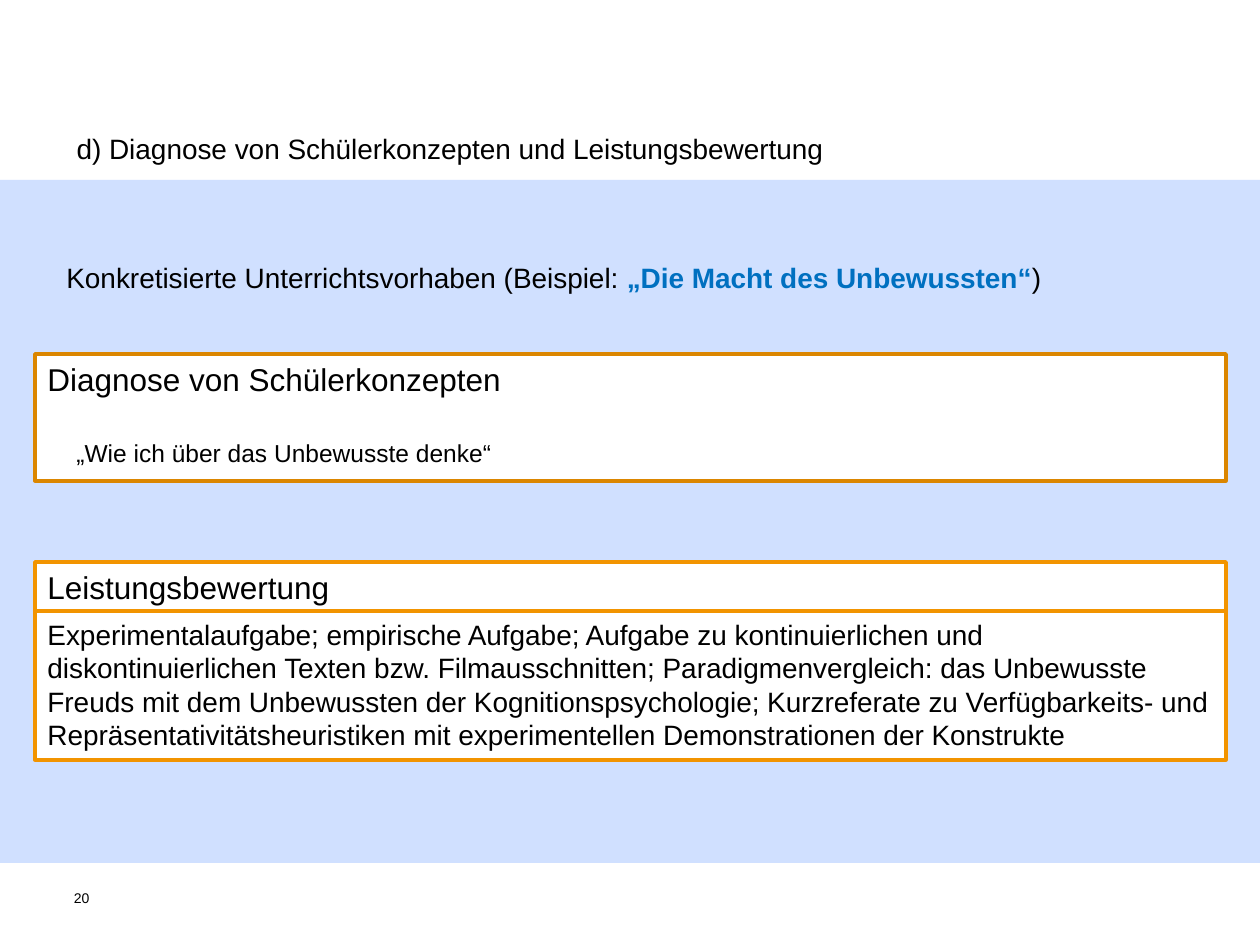
from pptx import Presentation
from pptx.dml.color import RGBColor
from pptx.enum.shapes import MSO_SHAPE
from pptx.enum.text import MSO_ANCHOR, MSO_AUTO_SIZE, PP_ALIGN
from pptx.oxml.ns import qn
from pptx.util import Emu, Pt

EMU_PER_PX = 914400 / 126
BLACK, WHITE, BLUE = "000000", "FFFFFF", "0070C0"
DARK_ORANGE, ORANGE = "DB8600", "F29400"


def px(length):
    return Emu(round(length * EMU_PER_PX))


def color(value):
    return RGBColor.from_string(value)


class SlideBuilder:
    """Holds the text style and the current slide."""

    font_name = "Arial"

    def __init__(self, slide):
        self.slide = slide

    def fill_text(self, shape, parts, size, anchor=MSO_ANCHOR.TOP, margins=True):
        text_frame = shape.text_frame
        text_frame.word_wrap = True
        text_frame.auto_size = MSO_AUTO_SIZE.NONE
        text_frame.vertical_anchor = anchor
        if not margins:
            text_frame.margin_left = text_frame.margin_right = 0
            text_frame.margin_top = text_frame.margin_bottom = 0
        paragraph = text_frame.paragraphs[0]
        paragraph.alignment = PP_ALIGN.LEFT
        for text, value, bold in parts:
            run = paragraph.add_run()
            run.text = text
            run.font.name = self.font_name
            run.font.size = Pt(size)
            run.font.bold = bold
            run.font.color.rgb = color(value)

    def title(self, text, left, top, width, height, size):
        shape = self.slide.shapes.title
        shape.left, shape.top = px(left), px(top)
        shape.width, shape.height = px(width), px(height)
        self.fill_text(shape, [(text, BLACK, False)], size)

    def text(self, parts, left, top, width, height, size, **options):
        shape = self.slide.shapes.add_textbox(px(left), px(top), px(width), px(height))
        self.fill_text(shape, parts, size, **options)

    def rectangle(self, left, top, width, height, fill):
        shape = self.slide.shapes.add_shape(
            MSO_SHAPE.RECTANGLE, px(left), px(top), px(width), px(height))
        shape.shadow.inherit = False
        shape.fill.solid()
        shape.fill.fore_color.rgb = color(fill)
        return shape

    def band(self, left, top, width, height, fill, opacity):
        shape = self.rectangle(left, top, width, height, fill)
        shape.line.fill.background()
        fill_color = shape._element.spPr.find(".//" + qn("a:srgbClr"))
        alpha = fill_color.makeelement(qn("a:alpha"), {"val": str(opacity * 1000)})
        fill_color.append(alpha)

    def panel(self, text, top, height, size, line):
        shape = self.rectangle(35, top, 1191, height, WHITE)
        shape.line.color.rgb = color(line)
        shape.line.width = Pt(2)
        self.fill_text(shape, [(text, BLACK, False)], size)


def main():
    presentation = Presentation()
    presentation.slide_width, presentation.slide_height = px(1260), px(945)
    slide = presentation.slides.add_slide(presentation.slide_layouts[5])
    builder = SlideBuilder(slide)

    builder.band(0, 180, 1260, 683, "6699FF", 30)
    builder.title("d) Diagnose von Schülerkonzepten und Leistungsbewertung",
                  64, 125, 1081, 47, 16)
    builder.text([("20", BLACK, False)], 74, 890, 40, 47, 8, margins=False)
    builder.text([("Konkretisierte Unterrichtsvorhaben (Beispiel: ", BLACK, False),
                  ("„Die Macht des Unbewussten“", BLUE, True),
                  (")", BLACK, False)], 54, 254, 1121, 47, 16)

    builder.panel("Diagnose von Schülerkonzepten", 354, 127, 18, DARK_ORANGE)
    builder.text([("„Wie ich über das Unbewusste denke“", BLACK, False)],
                 64, 431, 714, 43, 14, anchor=MSO_ANCHOR.MIDDLE)

    builder.panel("Leistungsbewertung", 562, 50, 18, ORANGE)
    builder.panel(
        "Experimentalaufgabe; empirische Aufgabe; Aufgabe zu kontinuierlichen und "
        "diskontinuierlichen Texten bzw. Filmausschnitten; Paradigmenvergleich: "
        "das Unbewusste Freuds mit dem Unbewussten der Kognitionspsychologie; "
        "Kurzreferate zu Verfügbarkeits- und Repräsentativitätsheuristiken mit "
        "experimentellen Demonstrationen der Konstrukte", 611, 149, 16, ORANGE)

    presentation.save("out.pptx")


if __name__ == "__main__":
    main()
